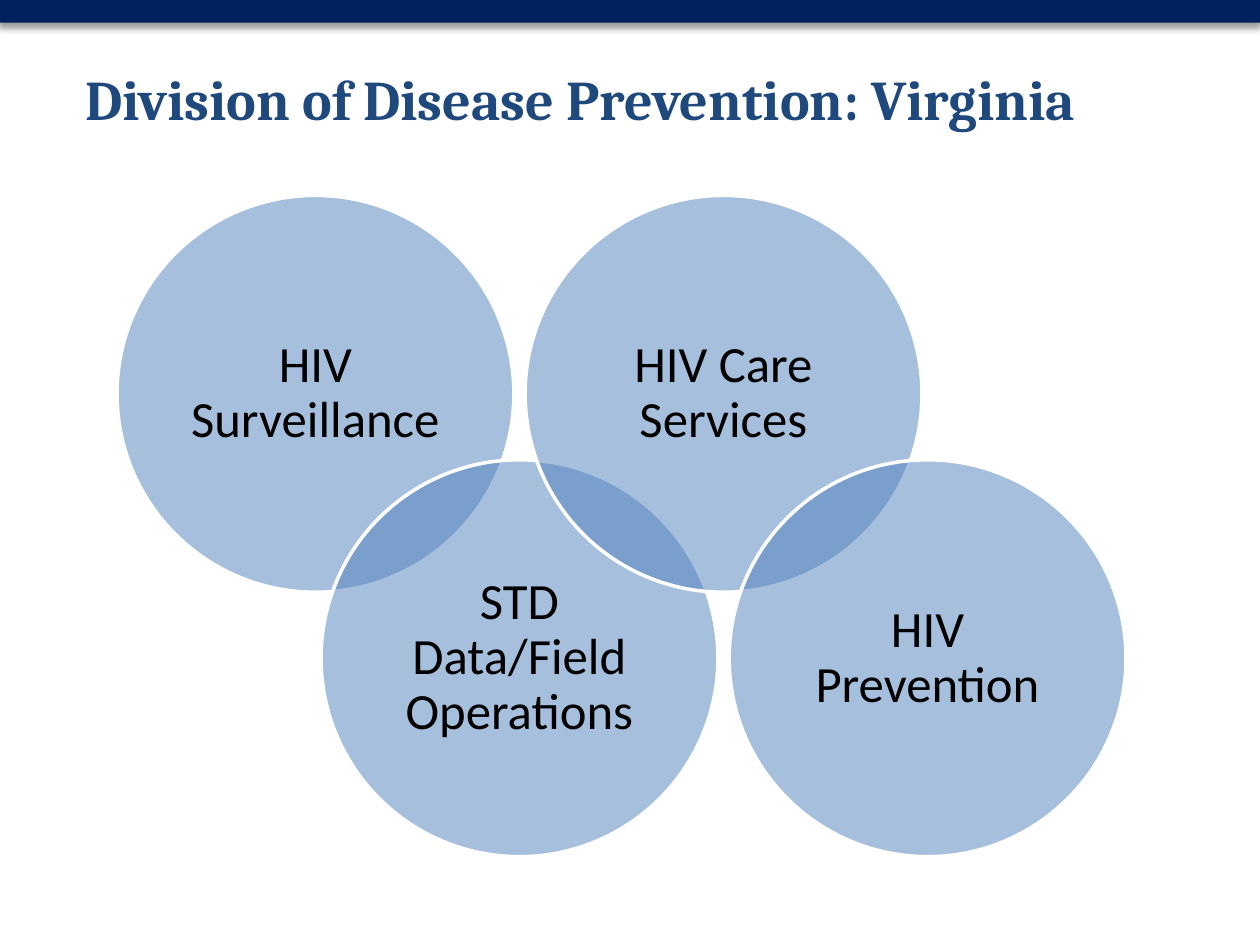
from lxml.etree import SubElement
from pptx import Presentation
from pptx.dml.color import RGBColor
from pptx.enum.shapes import MSO_SHAPE as Shape
from pptx.enum.text import MSO_ANCHOR as Anchor, PP_ALIGN as Align
from pptx.oxml.ns import qn
from pptx.util import Cm, Pt

COLORS = {
    "banner": "002060",
    "title": "1F497D",
    "circle": "4F81BD",
    "outline": "FFFFFF",
    "label": "000000",
    "shadow": "000000",
}
TITLE_FONT = {"name": "Cambria", "size": Pt(32), "bold": True}
LABEL_FONT = {"name": "Calibri", "size": Pt(29), "bold": False}
TITLE_FRAME = {"word_wrap": True, "vertical_anchor": Anchor.MIDDLE}
LABEL_FRAME = TITLE_FRAME | {
    f"margin_{side}": Cm(0.3) for side in ("left", "top", "right", "bottom")
}
TITLE_PARAGRAPH = {"alignment": Align.LEFT}
LABEL_PARAGRAPH = {"alignment": Align.CENTER, "line_spacing": 0.9}
PROGRAMS = (
    "HIV Surveillance",
    "STD Data/Field Operations",
    "HIV Care Services",
    "HIV Prevention",
)


def rgb(part):
    """Return the colour of a slide part."""
    return RGBColor.from_string(COLORS[part])


def apply(target, values):
    """Set every attribute named in values on the target."""
    for name, value in values.items():
        setattr(target, name, value)


def write(holder, text, frame_format, paragraph_format, font_format, part):
    """Write one formatted paragraph into a shape or text box."""
    frame = holder.text_frame
    apply(frame, frame_format)
    paragraph = frame.paragraphs[0]
    apply(paragraph, paragraph_format)
    run = paragraph.add_run()
    run.text = text
    apply(run.font, font_format)
    run.font.color.rgb = rgb(part)


def add_filled(slide, kind, box, part):
    """Add a preset shape with a solid fill and no shadow."""
    shape = slide.shapes.add_shape(kind, *map(Cm, box))
    shape.shadow.inherit = False
    shape.fill.solid()
    shape.fill.fore_color.rgb = rgb(part)
    return shape


def add_banner(slide, box):
    """Draw the top band with a soft shadow beneath it."""
    banner = add_filled(slide, Shape.RECTANGLE, box, "banner")
    banner.line.fill.background()
    effects = banner._element.spPr.find(qn("a:effectLst"))
    shadow = SubElement(
        effects, qn("a:outerShdw"), blurRad=str(Pt(4)), dist=str(Pt(3)),
        dir="5400000", algn="t", rotWithShape="0",
    )
    tint = SubElement(shadow, qn("a:srgbClr"), val=COLORS["shadow"])
    SubElement(tint, qn("a:alpha"), val="40000")


def add_title(slide, box):
    """Place the slide title."""
    title = slide.shapes.add_textbox(*map(Cm, box))
    write(title, "Division of Disease Prevention: Virginia",
          TITLE_FRAME, TITLE_PARAGRAPH, TITLE_FONT, "title")


def add_circle(slide, box, program):
    """Draw one translucent labelled circle."""
    circle = add_filled(slide, Shape.OVAL, box, "circle")
    tint = circle._element.spPr.find(qn("a:solidFill"))[0]
    SubElement(tint, qn("a:alpha"), val="50000")
    circle.line.color.rgb = rgb("outline")
    circle.line.width = Pt(2)
    write(circle, program, LABEL_FRAME, LABEL_PARAGRAPH, LABEL_FONT, "label")


def add_circles(slide, box, diameter):
    """Spread the program circles evenly, alternating top and bottom rows."""
    left, top, width, height = box
    step = (width - diameter) / (len(PROGRAMS) - 1)
    drop = height - diameter
    for index, program in enumerate(PROGRAMS):
        place = (left + index * step, top + index % 2 * drop, diameter, diameter)
        add_circle(slide, place, program)


def main():
    """Build and save the slide."""
    deck = Presentation()
    apply(deck, {"slide_width": Cm(25.4), "slide_height": Cm(19.05)})
    slide = deck.slides.add_slide(deck.slide_layouts[6])
    add_banner(slide, (-0.03, -0.05, 25.43, 0.51))
    add_title(slide, (1.47, 1.07, 22.86, 1.83))
    add_circles(slide, (2.36, 3.94, 20.34, 13.33), 8)
    deck.save("out.pptx")


if __name__ == "__main__":
    main()
